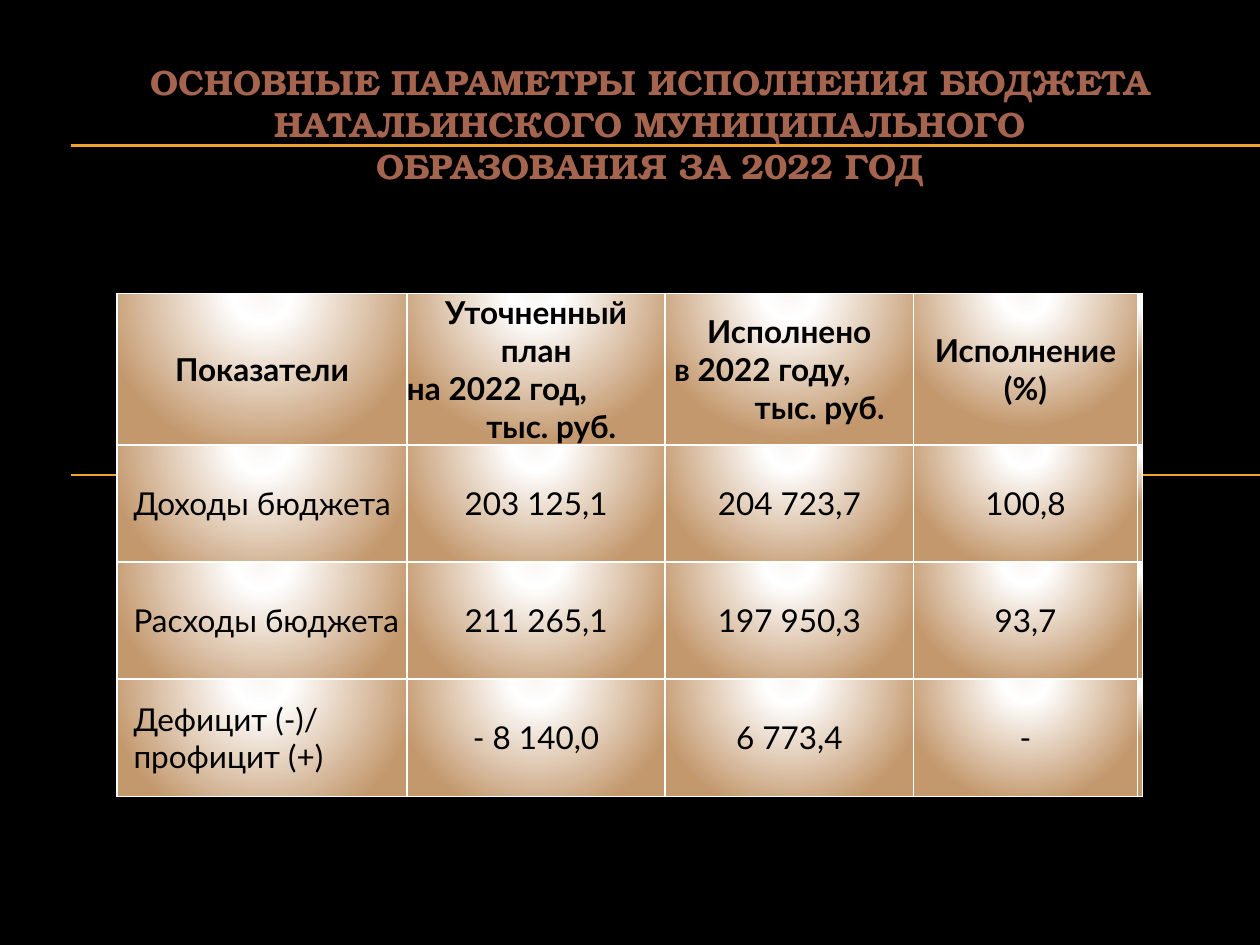
from lxml import etree
from pptx import Presentation, util as u
from pptx.dml.color import RGBColor
from pptx.enum import shapes, text
from pptx.oxml import parse_xml
from pptx.oxml.ns import nsdecls, qn

# Content: a cell is a list of (text, alignment, left indent in inches)
MID, LEFT = text.PP_ALIGN.CENTER, text.PP_ALIGN.LEFT
TITLE = ("ОСНОВНЫЕ ПАРАМЕТРЫ ИСПОЛНЕНИЯ БЮДЖЕТА "
         "НАТАЛЬИНСКОГО МУНИЦИПАЛЬНОГО ОБРАЗОВАНИЯ ЗА 2022 ГОД")
HEAD = [
    [("Показатели", MID, 0)],
    [("Уточненный план", MID, 0), ("на 2022 год,", LEFT, 0),
     ("тыс. руб.", LEFT, 0.63)],
    [("Исполнено", MID, 0), ("в 2022 году,", LEFT, 0.07),
     ("тыс. руб.", LEFT, 0.71)],
    [("Исполнение (%)", MID, 0)],
]
BODY = [
    (["Доходы бюджета"], "203 125,1", "204 723,7", "100,8"),
    (["Расходы бюджета"], "211 265,1", "197 950,3", "93,7"),
    (["Дефицит (-)/", "профицит (+)"], "- 8 140,0", "6 773,4", "-"),
]
COLS = [2.3, 2.05, 1.97, 1.78, 0.03]
ROWS = [1.2] + [0.93] * len(BODY)
RULES = [1.15, 1.16, 3.77]
PAD = 0.13
INK = {"back": "000000", "rule": "F0A22E", "title": "A5644E",
       "text": "000000", "edge": "FFFFFF"}
STOPS = [(0, "FAF7F3"), (18, "FFFFFF"), (100, "C3986D")]


def write(frame, lines, font, size, color, bold):
    """Fill a text frame with (text, alignment, indent) lines."""
    for i, (words, align, indent) in enumerate(lines):
        para = frame.paragraphs[0] if i == 0 else frame.add_paragraph()
        para.alignment = align
        para.space_before = u.Pt(0)
        if indent:
            para._p.get_or_add_pPr().set("marL", str(u.Inches(indent)))
        run = para.add_run()
        run.text = words
        run.font.name, run.font.size, run.font.bold = font, u.Pt(size), bold
        run.font.color.rgb = RGBColor.from_string(INK[color])


def paint(cell):
    """White borders and a glow from above."""
    props = cell._tc.get_or_add_tcPr()
    for side in "LRTB":
        props.append(parse_xml(
            f'<a:ln{side} {nsdecls("a")} w="12700"><a:solidFill>'
            f'<a:srgbClr val="{INK["edge"]}"/></a:solidFill></a:ln{side}>'))
    stops = "".join(f'<a:gs pos="{at * 1000}"><a:srgbClr val="{tone}"/></a:gs>'
                    for at, tone in STOPS)
    props.append(parse_xml(
        f'<a:gradFill {nsdecls("a")} rotWithShape="1"><a:gsLst>{stops}</a:gsLst>'
        '<a:path path="circle"><a:fillToRect l="50000" t="-80000" '
        'r="50000" b="180000"/></a:path></a:gradFill>'))


deck = Presentation()
deck.slide_width, deck.slide_height = u.Inches(10), u.Inches(7.5)
slide = deck.slides.add_slide(deck.slide_layouts[5])
slide.background.fill.solid()
slide.background.fill.fore_color.rgb = RGBColor.from_string(INK["back"])

# Rules across the slide
for y in RULES:
    rule = slide.shapes.add_connector(
        shapes.MSO_CONNECTOR.STRAIGHT,
        u.Inches(0.56), u.Inches(y), deck.slide_width, u.Inches(y))
    rule.line.color.rgb = RGBColor.from_string(INK["rule"])
    rule.line.width = u.Pt(0.75)
    etree.SubElement(rule._element.spPr, qn("a:effectLst"))

# Budget table
grid = slide.shapes.add_table(
    len(ROWS), len(COLS), u.Inches(0.93), u.Inches(2.33),
    u.Inches(sum(COLS)), u.Inches(sum(ROWS))).table
for col, width in zip(grid.columns, COLS):
    col.width = u.Inches(width)
for row, height in zip(grid.rows, ROWS):
    row.height = u.Inches(height)

cells = [HEAD] + [
    [[(line, LEFT, PAD) for line in name]] + [[(num, MID, 0)] for num in nums]
    for name, *nums in BODY]
for r in range(len(ROWS)):
    for c in range(len(COLS)):
        cell = grid.cell(r, c)
        cell.margin_left = cell.margin_right = 0
        cell.margin_top = cell.margin_bottom = 0
        cell.vertical_anchor = text.MSO_ANCHOR.MIDDLE
        paint(cell)
        if c < len(cells[r]):
            write(cell.text_frame, cells[r][c], font="Lato", size=18,
                  color="text", bold=r == 0)

# Title, in front of the rules
title = slide.shapes.title
title.left, title.top = u.Inches(0.91), u.Inches(0.44)
title.width, title.height = u.Inches(8.5), u.Inches(1.08)
title.text_frame.word_wrap = True
title.text_frame.auto_size = text.MSO_AUTO_SIZE.NONE
title.text_frame.vertical_anchor = text.MSO_ANCHOR.MIDDLE
write(title.text_frame, [(TITLE, MID, 0)], font="TeX Gyre Bonum", size=20,
      color="title", bold=True)
slide.shapes._spTree.append(title._element)

deck.save("out.pptx")
